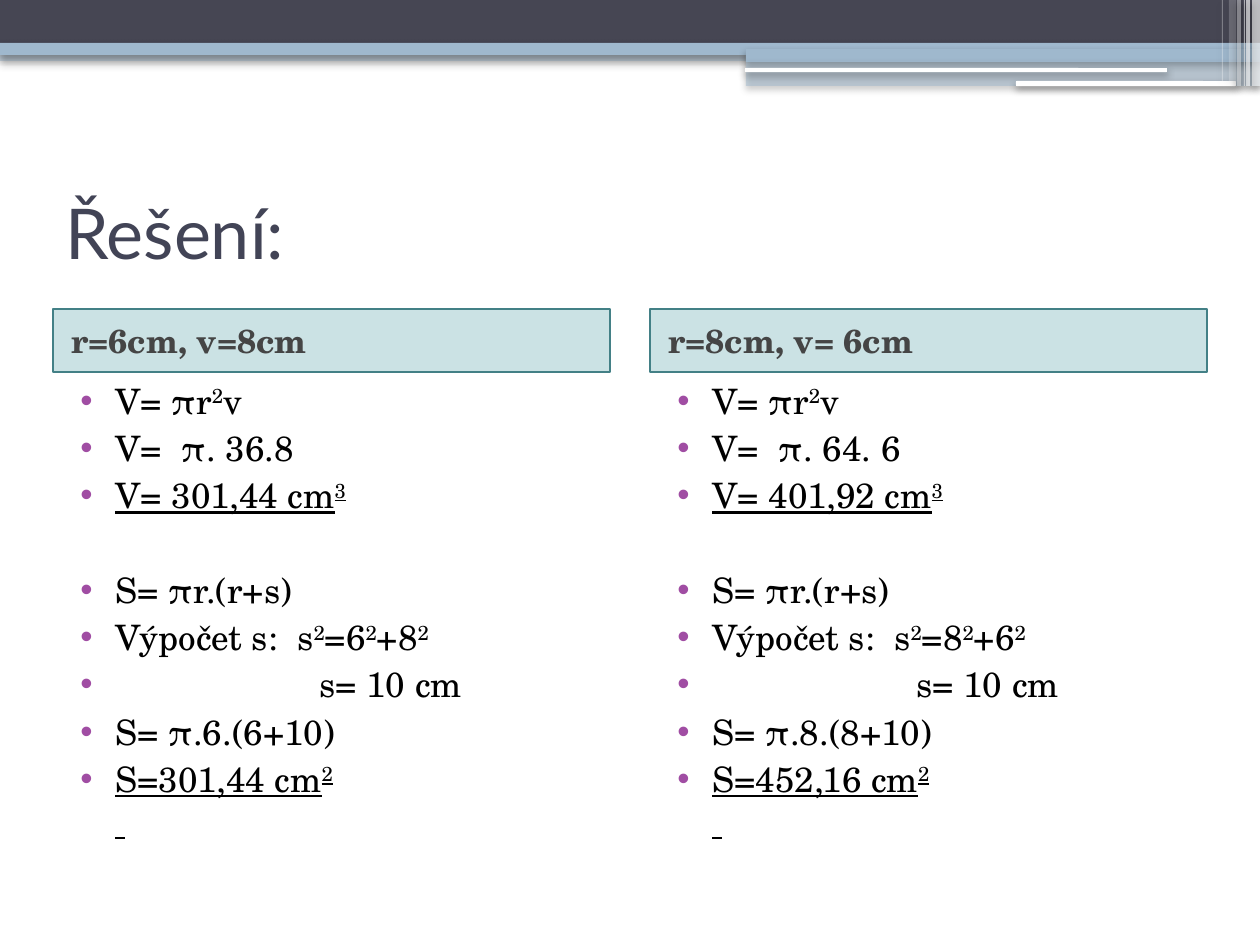
from lxml.etree import SubElement
from pptx import Presentation
from pptx.dml.color import RGBColor
from pptx.enum.shapes import MSO_SHAPE as Preset
from pptx.enum.text import MSO_ANCHOR as Anchor, PP_ALIGN as Align
from pptx.oxml.ns import qn
from pptx.util import Emu, Pt

EMU_PER_PX = 914400 / 126
SERIF = "TeX Gyre Schola"
SANS = "Lato"
COLUMN_WIDTH = 557
BULLET_LEFT = 15
TEXT_LEFT = 50
RESULT_LEFT = 254

BANDS = [
    (0, 50, 1260, 11, "9FB8CD", 50),
    (0, 0, 1260, 43, "464653", 100),
    (0, 43, 1260, 12, "9FB8CD", 100),
    (746, 49, 514, 13, "9FB8CD", 100),
    (746, 61, 514, 25, "9FB8CD", 50),
]
RULES = [(745, 68, 422, 4), (1016, 81, 220, 5)]
STRIPES = [
    (1252, 8, 86, 66),
    (1246, 4, 86, 66),
    (1244, 1, 86, 60),
    (1237, 4, 86, 40),
    (1229, 7, 81, 20),
    (1222, 1, 81, 31),
]
COLUMNS = [
    (53, "r=6cm, v=8cm", "V=  π. 36.8", "V= 301,44 cm^3",
     "Výpočet s:  s^2=6^2+8^2", "S= π.6.(6+10)", "S=301,44 cm^2"),
    (650, "r=8cm, v= 6cm", "V=  π. 64. 6", "V= 401,92 cm^3",
     "Výpočet s:  s^2=8^2+6^2", "S= π.8.(8+10)", "S=452,16 cm^2"),
]


def px(length):
    return Emu(round(length * EMU_PER_PX))


def color(value):
    return RGBColor.from_string(value)


def set_alpha(fill_parent, percent):
    SubElement(fill_parent, qn("a:alpha")).set("val", str(percent * 1000))


def add_shadow(shape):
    effects = shape._element.spPr.find(qn("a:effectLst"))
    shadow = SubElement(effects, qn("a:outerShdw"), blurRad=str(Pt(4.1)),
                        dist=str(Pt(2)), dir="5400000", rotWithShape="0")
    set_alpha(SubElement(shadow, qn("a:srgbClr"), val="000000"), 40)


def add_block(slide, box, fill, alpha=100, preset=Preset.RECTANGLE,
              line=None, shadow=True):
    shape = slide.shapes.add_shape(preset, *map(px, box))
    shape.shadow.inherit = False
    shape.fill.solid()
    shape.fill.fore_color.rgb = color(fill)
    if alpha < 100:
        set_alpha(shape._element.spPr.find(f"{qn('a:solidFill')}/{qn('a:srgbClr')}"), alpha)
    if line:
        shape.line.color.rgb = color(line)
        shape.line.width = Pt(1)
    else:
        shape.line.fill.background()
    if shadow:
        add_shadow(shape)
    return shape


def add_text_box(slide, box, anchor=Anchor.TOP):
    frame = slide.shapes.add_textbox(*map(px, box)).text_frame
    frame.word_wrap = True
    frame.vertical_anchor = anchor
    return frame


def add_run(paragraph, text, size, font, fill, bold, underline, raised=False):
    run = paragraph.add_run()
    run.text = text
    run.font.size = Pt(size)
    run.font.name = font
    run.font.color.rgb = color(fill)
    run.font.bold = bold
    run.font.underline = underline
    if raised:
        run.font._element.set("baseline", "30000")


def write(paragraph, text, size=20, font=SERIF, fill="000000", bold=False,
          underline=False, before=0, left=0, indent=0):
    paragraph.alignment = Align.LEFT
    paragraph.space_before = Pt(before)
    properties = paragraph._p.get_or_add_pPr()
    properties.set("marL", str(px(left)))
    properties.set("indent", str(px(indent)))
    style = (size, font, fill, bold, underline)
    base, *powers = text.split("^")
    add_run(paragraph, base, *style)
    for power in powers:
        add_run(paragraph, power[0], *style, raised=True)
        if power[1:]:
            add_run(paragraph, power[1:], *style)


def add_bullet(paragraph):
    properties = paragraph._p.get_or_add_pPr()
    bullet_color = SubElement(properties, qn("a:buClr"))
    SubElement(bullet_color, qn("a:srgbClr"), val="A04DA3")
    SubElement(properties, qn("a:buFont"), typeface="Arial")
    SubElement(properties, qn("a:buChar"), char="•")


def add_solution(slide, left, volume, volume_result, slant, surface, surface_result):
    frame = add_text_box(slide, (left, 373, COLUMN_WIDTH, 535))
    steps = [
        ("V= πr^2v", {}),
        (volume, {}),
        (volume_result, {"underline": True}),
        ("S= πr.(r+s)", {"before": 30}),
        (slant, {}),
        ("s= 10 cm", {"left": RESULT_LEFT}),
        (surface, {}),
        (surface_result, {"underline": True}),
    ]
    for index, (text, changes) in enumerate(steps):
        paragraph = frame.add_paragraph() if index else frame.paragraphs[0]
        style = {"before": 3, "left": TEXT_LEFT, **changes}
        write(paragraph, text, indent=BULLET_LEFT - style["left"], **style)
        add_bullet(paragraph)
    paragraph.add_line_break()
    add_run(paragraph, " ", 20, SERIF, "000000", False, True)


def add_heading(slide, left, text):
    shape = add_block(slide, (left, 309, COLUMN_WIDTH, 63), "328E97", 25,
                      line="438086", shadow=False)
    shape.text_frame.word_wrap = True
    shape.text_frame.vertical_anchor = Anchor.MIDDLE
    write(shape.text_frame.paragraphs[0], text, size=19, fill="454545",
          bold=True, before=3, left=6)


def add_decoration(slide):
    for *box, fill, alpha in BANDS:
        add_block(slide, box, fill, alpha)
    for box in RULES:
        add_block(slide, box, "FFFFFF", preset=Preset.ROUNDED_RECTANGLE)
    for left, width, height, alpha in STRIPES:
        add_block(slide, (left, 0, width, height), "FFFFFF", alpha)


def main():
    presentation = Presentation()
    presentation.slide_width = px(1260)
    presentation.slide_height = px(945)
    slide = presentation.slides.add_slide(presentation.slide_layouts[6])
    add_decoration(slide)
    title = add_text_box(slide, (53, 158, 1155, 147), Anchor.MIDDLE)
    write(title.paragraphs[0], "Řešení:", size=40, font=SANS, fill="424456")
    for left, heading, *steps in COLUMNS:
        add_heading(slide, left, heading)
        add_solution(slide, left, *steps)
    presentation.save("out.pptx")


if __name__ == "__main__":
    main()
